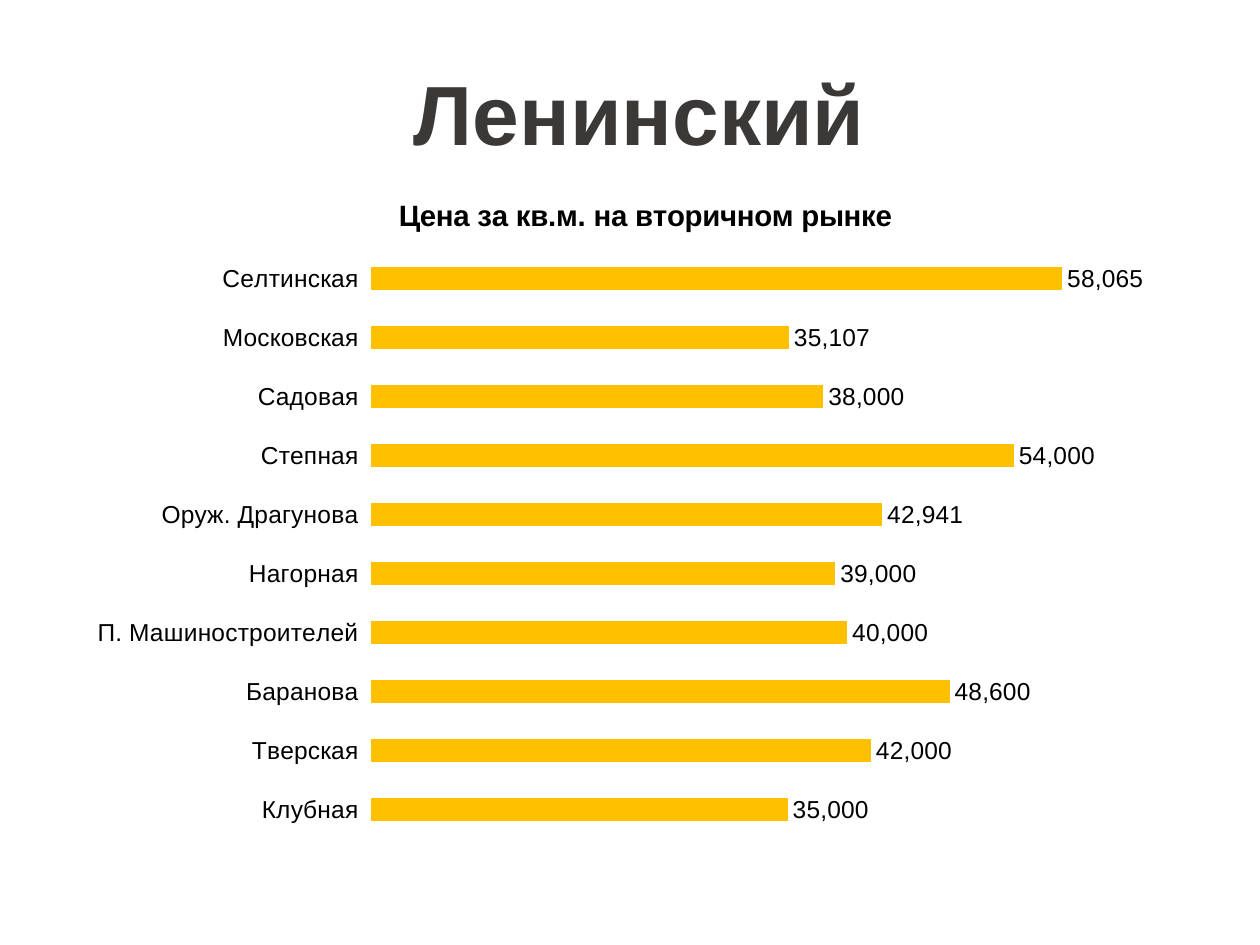
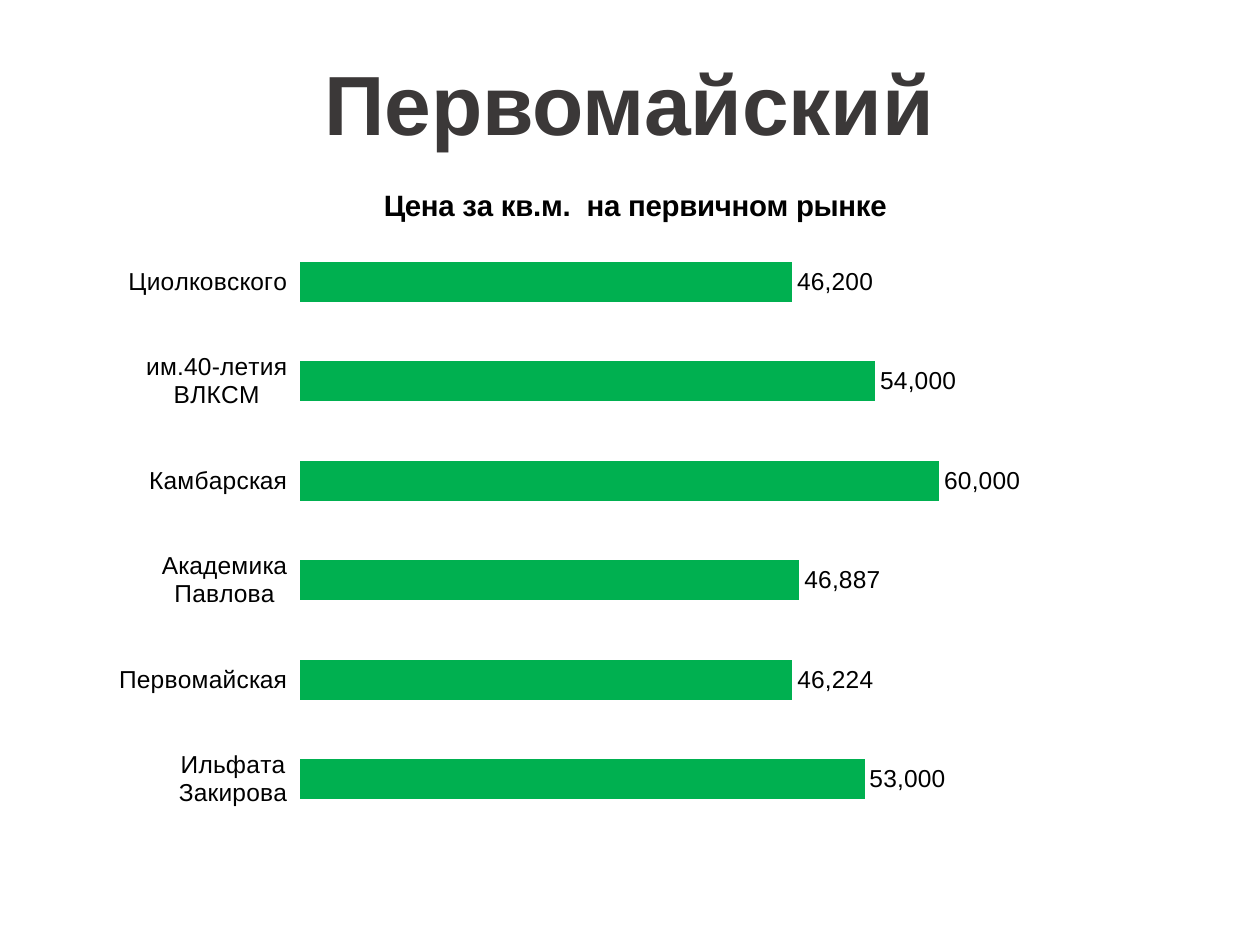
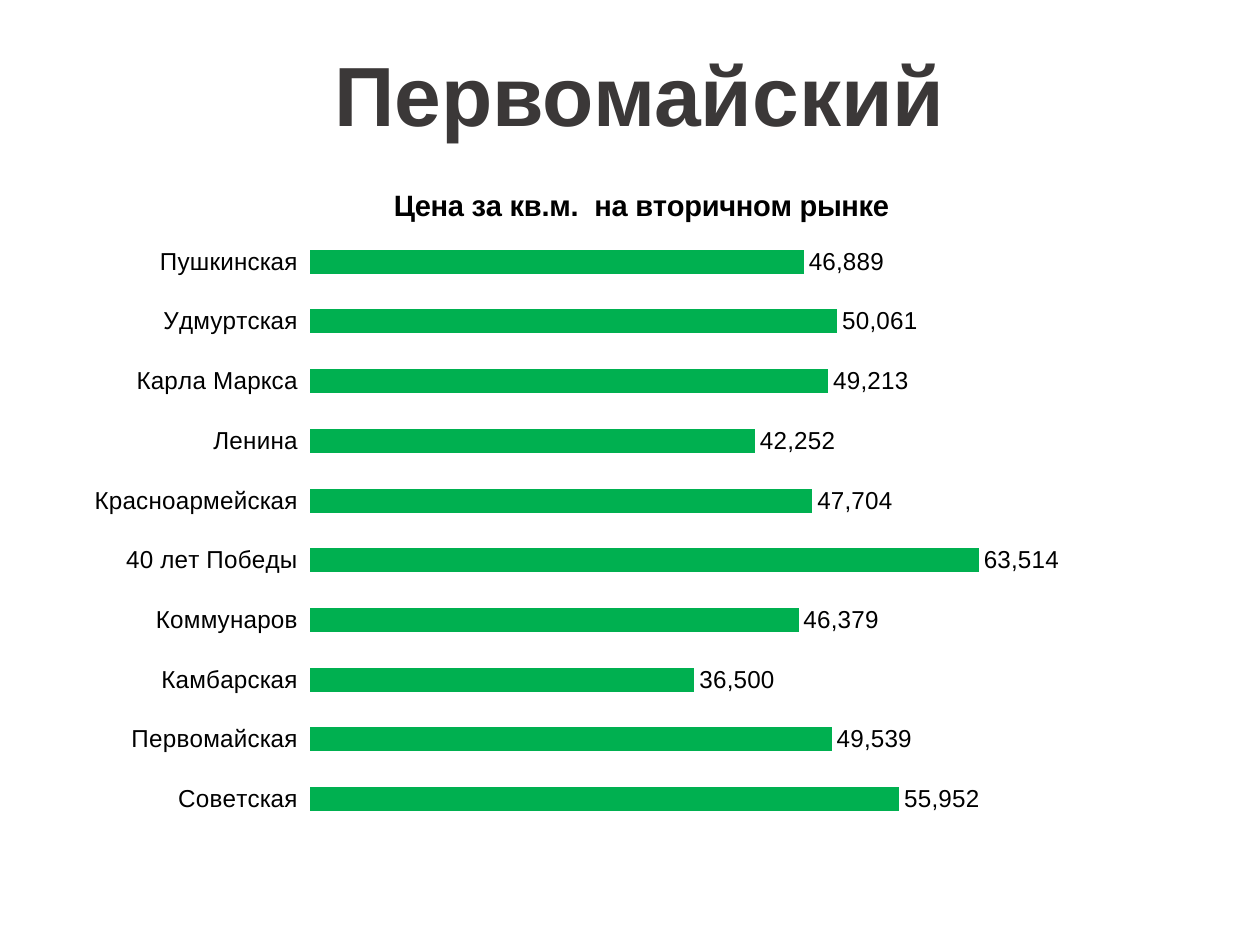
from pptx import Presentation
from pptx.chart.data import CategoryChartData
from pptx.dml.color import RGBColor
from pptx.enum.chart import XL_CHART_TYPE, XL_LABEL_POSITION, XL_TICK_MARK
from pptx.enum.text import MSO_AUTO_SIZE, PP_ALIGN
from pptx.oxml import parse_xml
from pptx.oxml.ns import nsdecls, qn
from pptx.util import Pt

FONT = "Arial"
DARK, BLACK, GOLD, GREEN = "3B3838", "000000", "FFC000", "00B050"
HEAD_SIZE = (578.16, 65.52)
WIDE_BOX = (42.48, 97.2, 652.32, 411.12)
SLIM_BOX = (54, 91.44, 617.76, 411.12)
WIDE_PLOT = (0.26, 0.11, 0.73, 0.82)
SLIM_PLOT = (0.19, 0.1, 0.69, 0.83)

PAGES = [
    ("Ленинский", (76.32, 31.68), "Цена за кв.м. на вторичном рынке",
     GOLD, WIDE_BOX, WIDE_PLOT, {
         "Клубная": 35000, "Тверская": 42000, "Баранова": 48600,
         "П. Машиностроителей": 40000, "Нагорная": 39000,
         "Оруж. Драгунова": 42941, "Степная": 54000, "Садовая": 38000,
         "Московская": 35107, "Селтинская": 58065}),
    ("Первомайский", (70.56, 25.92), "Цена за кв.м.  на первичном рынке",
     GREEN, SLIM_BOX, SLIM_PLOT, {
         "Ильфата Закирова": 53000, "Первомайская": 46224,
         "Академика Павлова": 46887, "Камбарская": 60000,
         "им.40-летия ВЛКСМ": 54000, "Циолковского": 46200}),
    ("Первомайский", (76.32, 20.88), "Цена за кв.м.  на вторичном рынке",
     GREEN, SLIM_BOX, SLIM_PLOT, {
         "Советская": 55952, "Первомайская": 49539, "Камбарская": 36500,
         "Коммунаров": 46379, "40 лет Победы": 63514,
         "Красноармейская": 47704, "Ленина": 42252, "Карла Маркса": 49213,
         "Удмуртская": 50061, "Пушкинская": 46889}),
]


def color(code):
    """Turn a hex string into a colour."""
    return RGBColor.from_string(code)


def style(font, size, code, bold=False):
    """Set face, size, colour and weight of a font."""
    font.name, font.size, font.bold = FONT, Pt(size), bold
    font.color.rgb = color(code)


def add_run(para, text, size, code):
    """Add one bold run to a paragraph."""
    run = para.add_run()
    run.text = text
    style(run.font, size, code, True)


def add_head(slide, text, spot):
    """Add the centred district name."""
    box = slide.shapes.add_textbox(*map(Pt, spot + HEAD_SIZE))
    frame = box.text_frame
    frame.word_wrap = True
    frame.auto_size = MSO_AUTO_SIZE.SHAPE_TO_FIT_TEXT
    para = frame.paragraphs[0]
    para.alignment = PP_ALIGN.CENTER
    add_run(para, text, 48, DARK)


def place_plot(chart, plot):
    """Fix the inner plot area as shares of the chart."""
    area = chart._chartSpace.chart.plotArea
    for old in area.findall(qn("c:layout")):
        area.remove(old)
    modes = '<c:xMode val="edge"/><c:yMode val="edge"/>'
    sides = "".join(f'<c:{key} val="{val}"/>' for key, val in zip("xywh", plot))
    area.insert(0, parse_xml(
        f'<c:layout {nsdecls("c")}><c:manualLayout>'
        f'<c:layoutTarget val="inner"/>{modes}{sides}'
        '</c:manualLayout></c:layout>'))


def add_bars(slide, title, code, box, plot, costs):
    """Add the bar chart of prices by street."""
    data = CategoryChartData(number_format="#,##0")
    data.categories = list(costs)
    data.add_series(title, list(costs.values()))
    chart = slide.shapes.add_chart(
        XL_CHART_TYPE.BAR_CLUSTERED, *map(Pt, box), data).chart
    style(chart.font, 14, BLACK)
    chart.has_legend = False
    chart.has_title = True
    head = chart.chart_title
    head.include_in_layout = False
    add_run(head.text_frame.paragraphs[0], title, 16.8, BLACK)
    place_plot(chart, plot)

    streets, scale = chart.category_axis, chart.value_axis
    streets.format.line.fill.background()
    streets.major_tick_mark = XL_TICK_MARK.OUTSIDE
    streets.has_major_gridlines = scale.has_major_gridlines = False
    scale.minimum_scale, scale.maximum_scale = 0, 70000
    scale.visible = False

    bars = chart.plots[0]
    bars.gap_width = 150
    bars.vary_by_categories = False
    fill = bars.series[0].format.fill
    fill.solid()
    fill.fore_color.rgb = color(code)
    bars.has_data_labels = True
    labels = bars.data_labels
    labels.show_value = True
    labels.number_format = "#,##0"
    labels.number_format_is_linked = False
    labels.position = XL_LABEL_POSITION.OUTSIDE_END
    style(labels.font, 14, BLACK)


def main():
    """Build and save the slides."""
    deck = Presentation()
    deck.slide_width, deck.slide_height = Pt(720), Pt(540)
    for name, spot, *rest in PAGES:
        slide = deck.slides.add_slide(deck.slide_layouts[6])
        add_head(slide, name, spot)
        add_bars(slide, *rest)
    deck.save("out.pptx")


if __name__ == "__main__":
    main()
